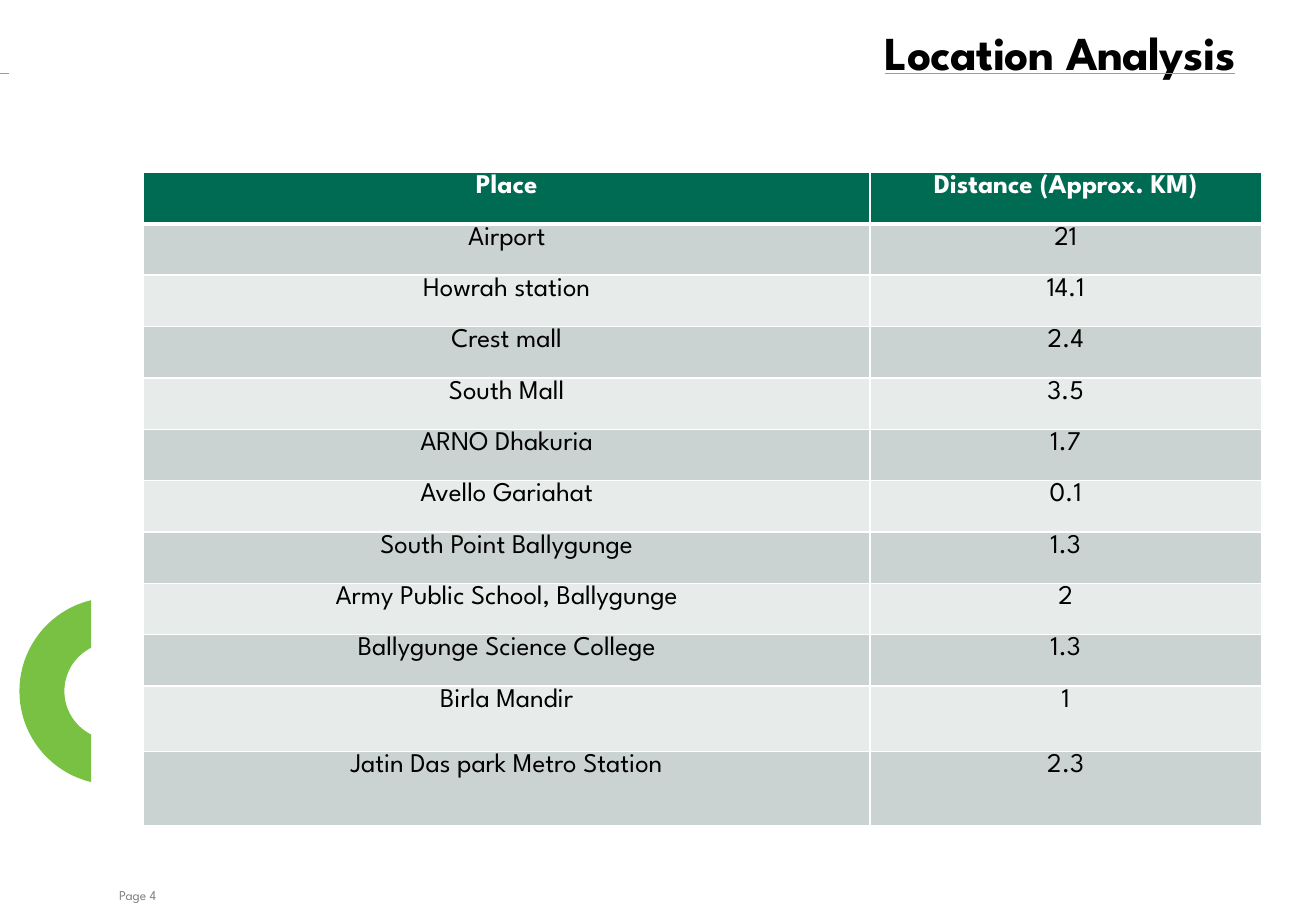
from dataclasses import dataclass
from math import acos, cos, sin

from lxml.etree import SubElement
from pptx import Presentation
from pptx.dml.color import RGBColor
from pptx.enum.text import MSO_ANCHOR, MSO_AUTO_SIZE, PP_ALIGN
from pptx.oxml.ns import qn
from pptx.util import Inches, Pt


@dataclass(frozen=True)
class Theme:
    font: str = "League Spartan"
    title_size: float = 28
    table_size: float = 16
    page_size: float = 8
    text: str = "000000"
    white: str = "FFFFFF"
    grey: str = "808080"
    header: str = "006B53"
    bands: tuple = ("CAD3D1", "E7EBE9")
    ring: str = "79C142"
    underline: str = "66CC33"


PLACES = [
    ("Place", "Distance (Approx. KM)"),
    ("Airport", "21"),
    ("Howrah station", "14.1"),
    ("Crest mall", "2.4"),
    ("South Mall", "3.5"),
    ("ARNO Dhakuria", "1.7"),
    ("Avello Gariahat", "0.1"),
    ("South Point Ballygunge", "1.3"),
    ("Army Public School, Ballygunge", "2"),
    ("Ballygunge Science College", "1.3"),
    ("Birla Mandir", "1"),
    ("Jatin Das park Metro Station", "2.3"),
]


def solid_fill(parent, color):
    fill = SubElement(parent, qn("a:solidFill"))
    SubElement(fill, qn("a:srgbClr"), val=color)


def add_text(p, text, *, font, size, color, bold=False, spacing=0, underline=None):
    r = p.add_run()
    r.text = text
    r.font.size = Pt(size)
    r.font.bold = bold
    r.font.color.rgb = RGBColor.from_string(color)
    r.font.name = font
    rPr = r.font._element
    if spacing:
        rPr.set("spc", str(round(spacing * 100)))
    if underline:
        r.font.underline = True
        line_fill = SubElement(rPr, qn("a:uFill"))
        solid_fill(line_fill, underline)
        rPr.find(qn("a:latin")).addprevious(line_fill)


class SlideBuilder:
    def __init__(self, prs, theme):
        self.theme = theme
        self.s = prs.slides.add_slide(prs.slide_layouts[5])

    def frame(self, shape, top=0):
        tf = shape.text_frame
        tf.word_wrap = True
        tf.auto_size = MSO_AUTO_SIZE.NONE
        tf.vertical_anchor = MSO_ANCHOR.TOP
        tf.margin_left = tf.margin_right = tf.margin_bottom = 0
        tf.margin_top = Inches(top)
        return tf.paragraphs[0]

    def title(self, text, left, top, width, height, tab):
        t = self.theme
        shape = self.s.shapes.title
        shape.left, shape.top = Inches(left), Inches(top)
        shape.width, shape.height = Inches(width), Inches(height)
        p = self.frame(shape, 0.01)
        p.alignment = PP_ALIGN.LEFT
        tabs = SubElement(p._p.get_or_add_pPr(), qn("a:tabLst"))
        SubElement(tabs, qn("a:tab"), pos=str(Inches(tab)), algn="l")
        # The underlined lead-in draws the short rule at the slide edge
        for part, spacing in ((" \t", 1.1), (text, -0.3)):
            add_text(p, part, font=t.font, size=t.title_size, color=t.text,
                     bold=True, spacing=spacing, underline=t.underline)

    def page_label(self, text, left, top, width, height):
        t = self.theme
        box = self.s.shapes.add_textbox(
            Inches(left), Inches(top), Inches(width), Inches(height))
        add_text(self.frame(box), text, font=t.font, size=t.page_size, color=t.grey)

    def cut_ring(self, cx, cy, outer, inner, cut, steps=40):
        def arc(radius, direction):
            half = acos((cx - cut) / radius)
            angles = [direction * half * (1 - 2 * i / steps) for i in range(steps + 1)]
            return [(Inches(cx - radius * cos(a)), Inches(cy - radius * sin(a)))
                    for a in angles]

        points = arc(outer, 1) + arc(inner, -1)
        builder = self.s.shapes.build_freeform(*points[0])
        builder.add_line_segments(points[1:], close=True)
        ring = builder.convert_to_shape()
        ring.shadow.inherit = False
        ring.fill.solid()
        ring.fill.fore_color.rgb = RGBColor.from_string(self.theme.ring)
        ring.line.fill.background()

    def cell(self, cell, text, fill, color, bold, borders):
        t = self.theme
        cell.margin_left = cell.margin_right = cell.margin_bottom = 0
        cell.margin_top = Inches(0.02)
        cell.vertical_anchor = MSO_ANCHOR.TOP
        tcPr = cell._tc.get_or_add_tcPr()
        for side, width in zip("LRTB", borders):
            line = SubElement(tcPr, qn(f"a:ln{side}"), w=str(Pt(width)))
            solid_fill(line, t.white)
        cell.fill.solid()
        cell.fill.fore_color.rgb = RGBColor.from_string(fill)
        p = cell.text_frame.paragraphs[0]
        p.alignment = PP_ALIGN.CENTER
        add_text(p, text, font=t.font, size=t.table_size, color=color, bold=bold)

    def table(self, rows, left, top, widths, heights):
        t = self.theme
        table = self.s.shapes.add_table(
            len(rows), len(widths), Inches(left), Inches(top),
            Inches(sum(widths)), Inches(sum(heights))).table
        table.first_row = table.horz_banding = False
        for column, width in zip(table.columns, widths):
            column.width = Inches(width)
        for i, (values, height) in enumerate(zip(rows, heights)):
            table.rows[i].height = Inches(height)
            head = i == 0
            fill = t.header if head else t.bands[(i - 1) % 2]
            color = t.white if head else t.text
            borders = (1, 1, 3 if i == 1 else 1, 3 if head else 1)
            for j, value in enumerate(values):
                self.cell(table.cell(i, j), value, fill, color, head, borders)


def main():
    prs = Presentation()
    prs.slide_width, prs.slide_height = Inches(10.83), Inches(7.5)
    slide = SlideBuilder(prs, Theme())

    # Decoration, title and page number
    slide.cut_ring(cx=0.93, cy=5.69, outer=0.77, inner=0.4, cut=0.75)
    slide.title("Location Analysis", -0.03, 0.18, 10.89, 0.49, tab=7.31)
    slide.page_label("Page 4", 0.98, 7.3, 0.4, 0.14)

    # Distances: equal rows, then two taller ones at the foot
    total, tall = 5.38, [0.54, 0.61]
    even = len(PLACES) - len(tall)
    heights = [(total - sum(tall)) / even] * even + tall
    slide.table(PLACES, 1.18, 1.42, (5.98, 3.22), heights)

    prs.save("out.pptx")


if __name__ == "__main__":
    main()
